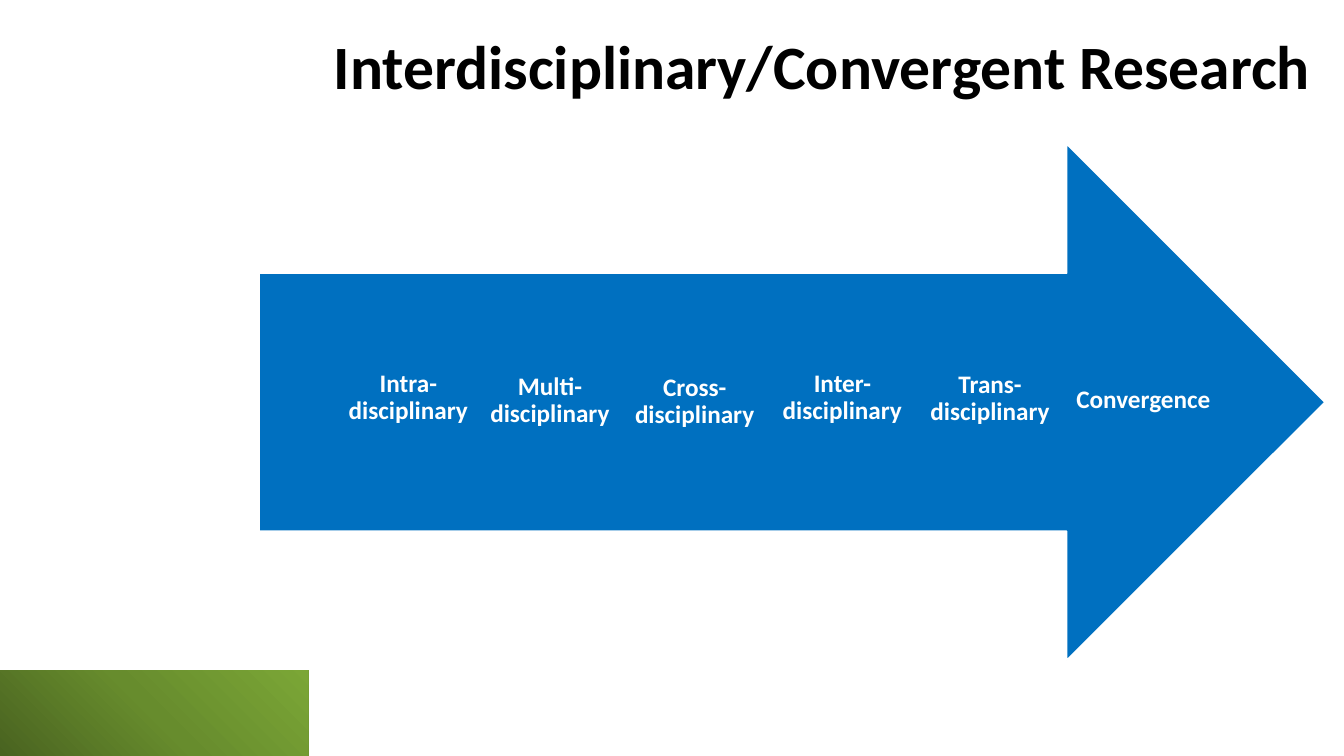
from copy import deepcopy
from dataclasses import dataclass

from pptx import Presentation
from pptx.dml.color import RGBColor
from pptx.enum.shapes import MSO_SHAPE as Preset
from pptx.enum.text import MSO_ANCHOR as Anchor, MSO_AUTO_SIZE as AutoSize, PP_ALIGN as Align
from pptx.oxml.ns import qn
from pptx.shapes.autoshape import Shape
from pptx.slide import Slide
from pptx.text.text import TextFrame
from pptx.util import Emu, Pt

EMU_PER_PX = 9144  # 100 px to the inch


@dataclass(frozen=True)
class Theme:
    font: str = "Calibri"
    title_size: int = 44
    label_size: int = 18
    title_color: str = "000000"
    label_color: str = "FFFFFF"
    arrow_fill: str = "0070C0"
    arrow_line: str = "FFFFFF"
    band_stops: tuple[str, ...] = ("496320", "678C2D", "7BA636")


@dataclass(frozen=True)
class Box:
    left: int
    top: int
    width: int
    height: int

    def emu(self) -> tuple[Emu, Emu, Emu, Emu]:
        return px(self.left), px(self.top), px(self.width), px(self.height)


@dataclass(frozen=True)
class Stage:
    text: str
    box: Box


THEME = Theme()
BAND = Box(0, 665, 306, 85)
TITLE = Box(318, 29, 996, 80)
ARROW = Box(257, 143, 1057, 512)
STAGES = (
    Stage("Intra-disciplinary", Box(342, 267, 126, 256)),
    Stage("Multi-disciplinary", Box(482, 283, 127, 230)),
    Stage("Cross-disciplinary", Box(623, 259, 132, 279)),
    Stage("Inter-disciplinary", Box(768, 267, 135, 256)),
    Stage("Trans-disciplinary", Box(917, 280, 130, 231)),
    Stage("Convergence", Box(1060, 269, 148, 256)),
)


def px(length: int) -> Emu:
    return Emu(length * EMU_PER_PX)


def rgb(color: str) -> RGBColor:
    return RGBColor.from_string(color)


def write_centered(text_frame: TextFrame, text: str, size: int, color: str) -> None:
    text_frame.text = text
    text_frame.word_wrap = True
    text_frame.auto_size = AutoSize.NONE
    text_frame.vertical_anchor = Anchor.MIDDLE
    paragraph = text_frame.paragraphs[0]
    paragraph.alignment = Align.CENTER
    paragraph.line_spacing = 0.9
    font = paragraph.runs[0].font
    font.name, font.size, font.bold = THEME.font, Pt(size), True
    font.color.rgb = rgb(color)


def add_preset(slide: Slide, preset: Preset, box: Box) -> Shape:
    shape = slide.shapes.add_shape(preset, *box.emu())
    shape.shadow.inherit = False
    return shape


def add_band(slide: Slide) -> None:
    band = add_preset(slide, Preset.RECTANGLE, BAND)
    band.line.fill.background()
    band.fill.gradient()
    band.fill.gradient_angle = 45
    # The default gradient has two stops; add the middle one
    stop_list = band._element.spPr.find(qn("a:gradFill")).find(qn("a:gsLst"))
    stop_list.insert(1, deepcopy(stop_list[0]))
    last = len(THEME.band_stops) - 1
    for index, (stop, color) in enumerate(zip(band.fill.gradient_stops, THEME.band_stops)):
        stop.position = index / last
        stop.color.rgb = rgb(color)


def add_title(slide: Slide) -> None:
    title = slide.shapes.title
    title.left, title.top, title.width, title.height = TITLE.emu()
    write_centered(title.text_frame, "Interdisciplinary/Convergent Research",
                   THEME.title_size, THEME.title_color)


def add_arrow(slide: Slide) -> None:
    arrow = add_preset(slide, Preset.RIGHT_ARROW, ARROW)
    arrow.fill.solid()
    arrow.fill.fore_color.rgb = rgb(THEME.arrow_fill)
    arrow.line.color.rgb = rgb(THEME.arrow_line)
    arrow.line.width = Pt(1)


def add_stage(slide: Slide, stage: Stage) -> None:
    text_frame = slide.shapes.add_textbox(*stage.box.emu()).text_frame
    text_frame.margin_left = text_frame.margin_right = 0
    text_frame.margin_top = text_frame.margin_bottom = px(20)
    write_centered(text_frame, stage.text, THEME.label_size, THEME.label_color)


def main() -> None:
    presentation = Presentation()
    presentation.slide_width, presentation.slide_height = px(1333), px(750)
    slide = presentation.slides.add_slide(presentation.slide_layouts[5])

    # Background band and heading
    add_band(slide)
    add_title(slide)

    # Arrow with the stages from left to right
    add_arrow(slide)
    for stage in STAGES:
        add_stage(slide, stage)

    presentation.save("out.pptx")


if __name__ == "__main__":
    main()
